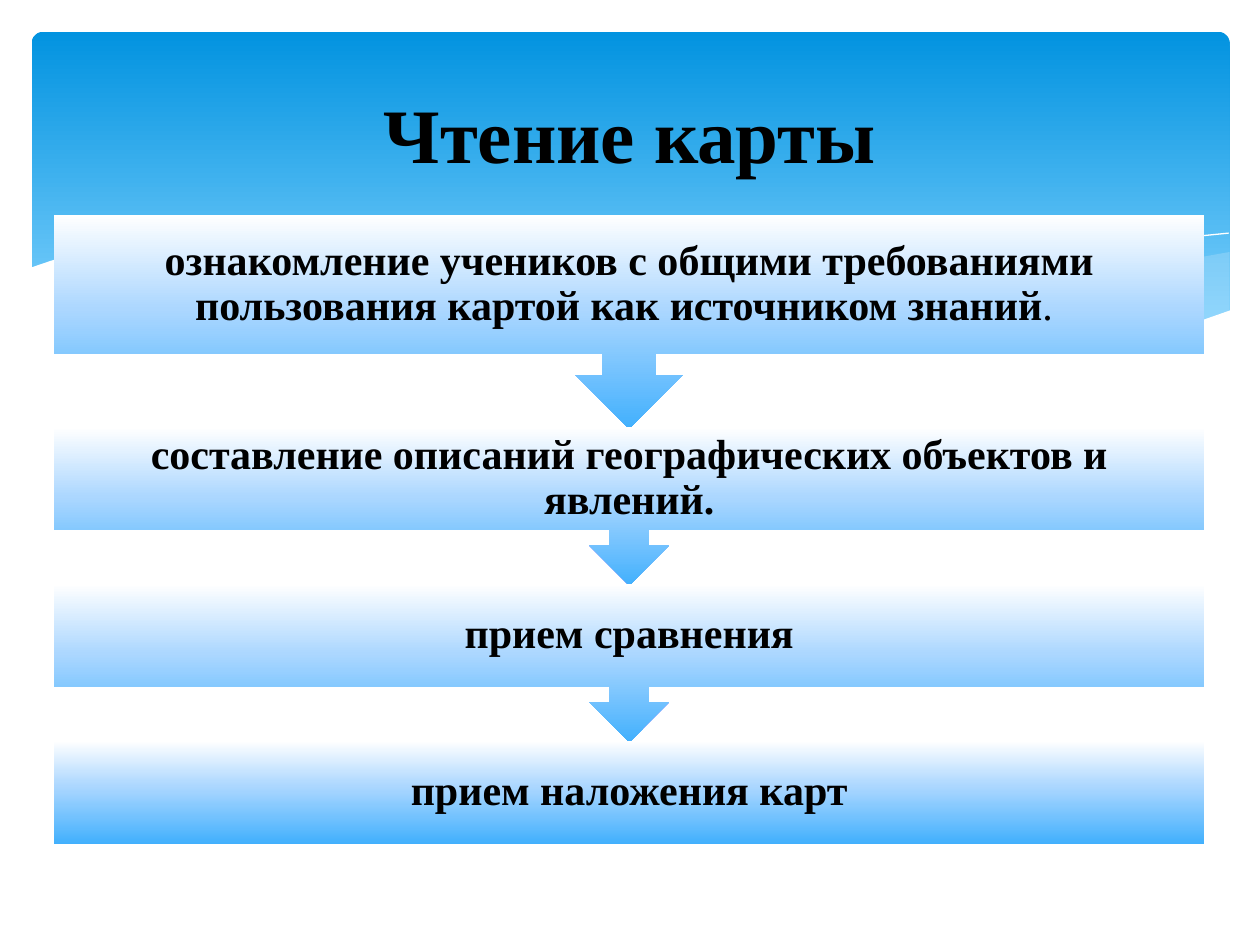
from copy import deepcopy

from lxml.etree import SubElement
from pptx import Presentation
from pptx.dml.color import RGBColor
from pptx.enum.shapes import MSO_SHAPE
from pptx.enum.text import MSO_ANCHOR, PP_ALIGN
from pptx.oxml.ns import qn
from pptx.util import Cm, Pt

COLORS = {"text": "000000", "white": "FFFFFF", "mist": "C6E7FC"}
SKY = [(0, "0293E0"), (0.9, "83D3FE")]
ICE = [(0, "FFFFFF"), (0.44, "ACD7FF"), (1, "42B0FD")]
FONT = "Times New Roman"

TITLE = "Чтение карты"
# Each step: height in cm, then runs of (text, bold)
STEPS = [
    (4.31, [("ознакомление учеников с общими требованиями пользования "
             "картой как источником знаний", True), (". ", False)]),
    (3.19, [("составление описаний географических объектов и явлений.", True)]),
    (3.19, [("прием сравнения", True)]),
    (2.08, [("прием наложения карт", True)]),
]
LEFT, TOP, WIDTH, LAP = 1.09, 4.33, 23.19, 0.03

# Wave outlines in cm: points, fill, opacity in percent (no fill: a white line)
WAVES = [
    ([(24.79, 5.08), (23.39, 5.33), (21.87, 5.66), (19.13, 6.3), (16.79, 6.73),
      (18.26, 6.91), (20.4, 7.06), (22.38, 6.93), (23.75, 6.65), (24.79, 6.27)],
     "mist", 29),
    ([(22.68, 6.93), (19.69, 6.45), (15.98, 5.64), (13.41, 5.08), (10.67, 4.75),
      (8.74, 4.72), (7.26, 4.85), (9.73, 5.26), (12.47, 5.89), (15.7, 6.55),
      (18.34, 6.96), (20.5, 7.06)], "mist", 40),
    ([(7.85, 4.95), (9.22, 4.8), (10.57, 4.75), (11.91, 4.8), (13.54, 4.93),
      (15.44, 5.18), (17.65, 5.56), (20.19, 6.12), (23.04, 6.91)], None, 100),
    ([(15.57, 6.53), (17.65, 5.97), (19.71, 5.49), (22, 5.05), (23.47, 4.83),
      (24.77, 4.7)], None, 100),
    ([(24.82, 6.25), (23.88, 6.58), (22.83, 6.83), (21.59, 6.99), (20.14, 7.04),
      (18.44, 6.96), (16.46, 6.65), (14.1, 6.22), (11.35, 5.59), (9.27, 5.13),
      (7.42, 4.83), (5.84, 4.7), (4.5, 4.67), (3.35, 4.72), (2.41, 4.85),
      (1.7, 5.05), (1.02, 5.26), (0.58, 5.41), (0.58, 8.36), (24.82, 8.36)],
     "white", 100),
]


def rgb(name):
    return RGBColor.from_string(COLORS[name])


def write(shape, runs, size=24, color="text", inset=0.48, spacing=0.9):
    frame = shape.text_frame
    frame.word_wrap = True
    frame.vertical_anchor = MSO_ANCHOR.MIDDLE
    frame.margin_left = frame.margin_right = Cm(inset)
    frame.margin_top = frame.margin_bottom = Cm(inset)
    para = frame.paragraphs[0]
    para.alignment = PP_ALIGN.CENTER
    para.line_spacing = spacing
    for text, bold in runs:
        run = para.add_run()
        run.text = text
        font = run.font
        font.name, font.size, font.bold = FONT, Pt(size), bold
        font.color.rgb = rgb(color)


def shade(shape, stops):
    """Fill from top to bottom with any number of colour stops."""
    fill = shape.fill
    fill.gradient()
    fill.gradient_angle = 270
    items = next(shape._element.iter(qn("a:gsLst")))
    while len(items) < len(stops):
        items.append(deepcopy(items[0]))
    for stop, (place, color) in zip(fill.gradient_stops, stops):
        stop.position = place
        stop.color.rgb = RGBColor.from_string(color)


def add_block(slide, kind, box, stops):
    shape = slide.shapes.add_shape(kind, *(Cm(n) for n in box))
    shape.shadow.inherit = False
    shape.line.fill.background()
    shade(shape, stops)
    return shape


def add_wave(slide, points, color, opacity):
    dots = [(Cm(x), Cm(y)) for x, y in points]
    pen = slide.shapes.build_freeform(*dots[0])
    pen.add_line_segments(dots[1:], close=color is not None)
    wave = pen.convert_to_shape()
    wave.shadow.inherit = False
    if color is None:
        wave.fill.background()
        wave.line.color.rgb = rgb("white")
        wave.line.width = Pt(0)
        return
    wave.line.fill.background()
    wave.fill.solid()
    wave.fill.fore_color.rgb = rgb(color)
    if opacity < 100:
        tint = next(wave._element.spPr.iter(qn("a:srgbClr")))
        SubElement(tint, qn("a:alpha"), val=str(opacity * 1000))


def main():
    deck = Presentation()
    deck.slide_width, deck.slide_height = Cm(25.4), Cm(19.05)
    slide = deck.slides.add_slide(deck.slide_layouts[5])

    sky = add_block(slide, MSO_SHAPE.ROUNDED_RECTANGLE,
                    (0.64, 0.64, 24.15, 6.86), SKY)
    sky.adjustments[0] = 0.034
    for wave in WAVES:
        add_wave(slide, *wave)

    top = TOP
    for index, (height, runs) in enumerate(STEPS):
        last = index == len(STEPS) - 1
        kind = MSO_SHAPE.RECTANGLE if last else MSO_SHAPE.DOWN_ARROW_CALLOUT
        step = add_block(slide, kind, (LEFT, top, WIDTH, height), ICE)
        write(step, runs)
        top += height - LAP

    title = slide.shapes.title
    title.left, title.top = Cm(1.27), Cm(0.94)
    title.width, title.height = Cm(22.86), Cm(3.48)
    write(title, [(TITLE, True)], size=44, inset=0.2, spacing=1.0)
    slide.shapes._spTree.append(title._element)  # bring to the front

    deck.save("out.pptx")


if __name__ == "__main__":
    main()
